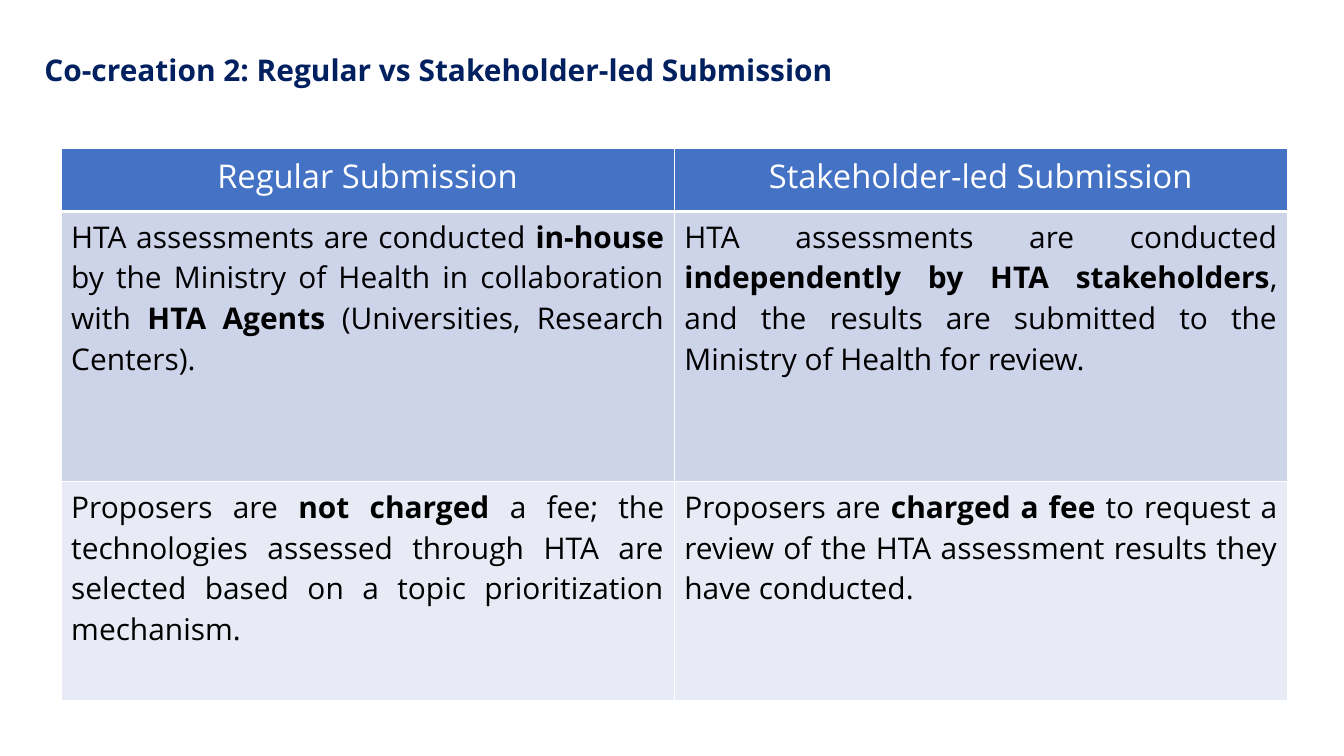
from lxml import etree
from pptx import Presentation
from pptx.dml.color import RGBColor
from pptx.enum.text import MSO_ANCHOR, MSO_AUTO_SIZE, PP_ALIGN
from pptx.oxml.ns import qn
from pptx.util import Inches, Pt

LEFT, CENTER, JUSTIFY = PP_ALIGN.LEFT, PP_ALIGN.CENTER, PP_ALIGN.JUSTIFY
MIDDLE, NO_FIT = MSO_ANCHOR.MIDDLE, MSO_AUTO_SIZE.NONE

FONT = "Open Sans"
COLORS = {
    "title": "002060",
    "header": "4472C4",
    "row_dark": "CDD4EA",
    "row_light": "E8EBF5",
    "white": "FFFFFF",
    "black": "000000",
}

TITLE = "Co-creation 2: Regular vs Stakeholder-led Submission"
# Text between double asterisks is bold
ROWS = [
    ("Regular Submission", "Stakeholder-led Submission"),
    (
        "HTA assessments are conducted **in-house** by the Ministry of Health in "
        "collaboration with **HTA Agents** (Universities, Research Centers).",
        "HTA assessments are conducted **independently by HTA stakeholders**, and the "
        "results are submitted to the Ministry of Health for review.",
    ),
    (
        "Proposers are **not charged** a fee; the technologies assessed through HTA are "
        "selected based on a topic prioritization mechanism.",
        "Proposers are **charged a fee **to request a review of the HTA assessment "
        "results they have conducted.",
    ),
]
ROW_HEIGHTS = [0.94, 4.02, 3.25]
ROW_FILLS = ["header", "row_dark", "row_light"]


def color(name):
    return RGBColor.from_string(COLORS[name])


def set_font(font, size, color_name):
    font.name = FONT
    font.size = Pt(size)
    font.color.rgb = color(color_name)


def set_borders(cell, bottom):
    """Draw white cell borders, with the bottom width in points."""
    properties = cell._tc.get_or_add_tcPr()
    for side, width in (("L", 1), ("R", 1), ("T", 1), ("B", bottom)):
        line = etree.SubElement(properties, qn(f"a:ln{side}"), w=str(Pt(width)))
        fill = etree.SubElement(line, qn("a:solidFill"))
        etree.SubElement(fill, qn("a:srgbClr"), val=COLORS["white"])


def fill_cell(cell, text, fill_name, is_header):
    set_borders(cell, bottom=3 if is_header else 1)
    cell.fill.solid()
    cell.fill.fore_color.rgb = color(fill_name)
    cell.margin_left = cell.margin_right = Inches(0.15)
    cell.margin_top = cell.margin_bottom = Inches(0.07)

    para = cell.text_frame.paragraphs[0]
    para.alignment = CENTER if is_header else JUSTIFY
    set_font(para.font, 35 if is_header else 32, "white" if is_header else "black")
    for index, part in enumerate(text.split("**")):
        span = para.add_run()
        span.text = part
        span.font.bold = index % 2 == 1


def add_title(page, left, top, width, height):
    box = page.shapes.title
    box.left, box.top = Inches(left), Inches(top)
    box.width, box.height = Inches(width), Inches(height)
    frame = box.text_frame
    frame.text = TITLE
    frame.word_wrap = True
    frame.auto_size = NO_FIT
    frame.vertical_anchor = MIDDLE
    para = frame.paragraphs[0]
    para.alignment = LEFT
    para.line_spacing = 0.9
    set_font(para.font, 32, "title")
    para.font.bold = True


def add_comparison(page, left, top, width, height):
    columns = len(ROWS[0])
    table = page.shapes.add_table(
        len(ROWS), columns, Inches(left), Inches(top), Inches(width), Inches(height)
    ).table
    for column in table.columns:
        column.width = Inches(width / columns)
    for row, row_height, fill_name, texts in zip(table.rows, ROW_HEIGHTS, ROW_FILLS, ROWS):
        row.height = Inches(row_height)
        for cell, text in zip(row.cells, texts):
            fill_cell(cell, text, fill_name, is_header=fill_name == "header")


def main():
    deck = Presentation()
    deck.slide_width, deck.slide_height = Inches(20), Inches(11.25)
    page = deck.slides.add_slide(deck.slide_layouts.get_by_name("Title Only"))

    # Title
    add_title(page, 0.56, 0.34, 18.39, 1.45)
    # Comparison table
    add_comparison(page, 0.91, 2.21, 18.25, sum(ROW_HEIGHTS))

    deck.save("out.pptx")


if __name__ == "__main__":
    main()
